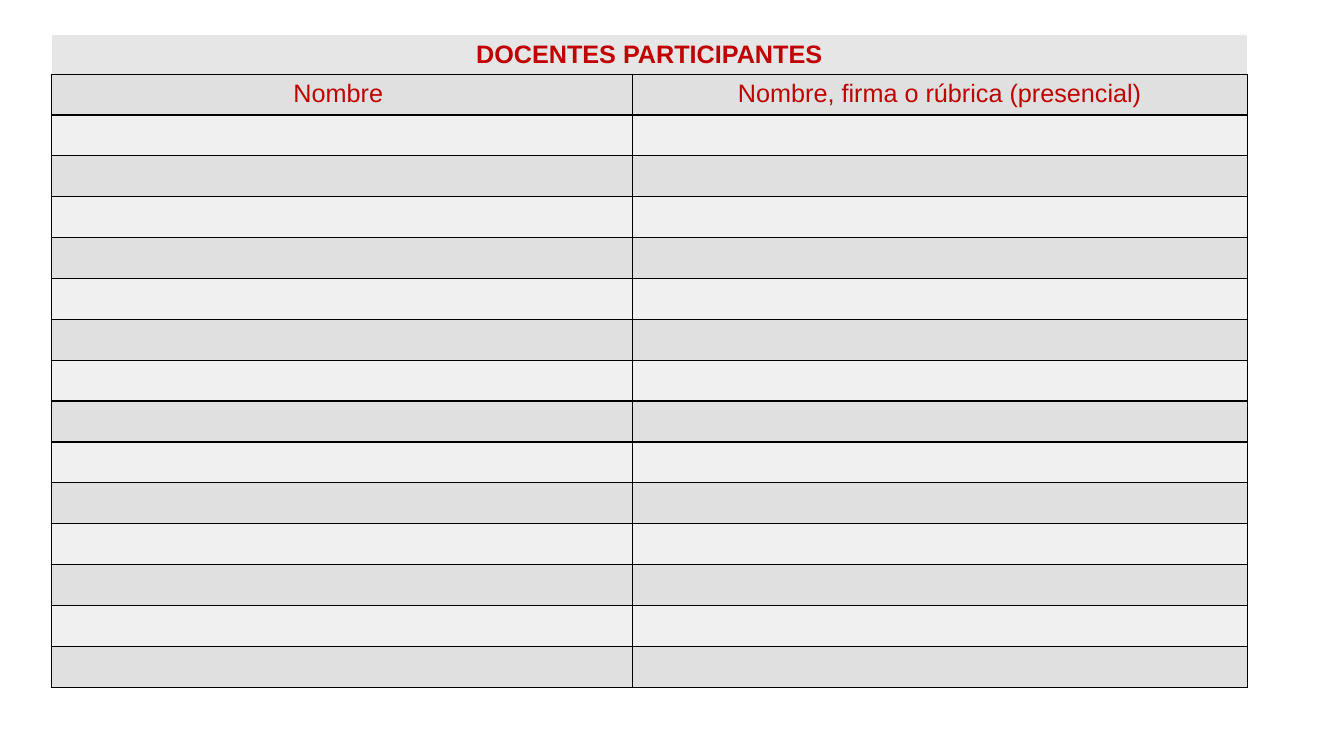
from lxml import etree
from pptx import Presentation
from pptx.dml.color import RGBColor
from pptx.enum.text import MSO_ANCHOR, PP_ALIGN
from pptx.oxml.ns import qn
from pptx.util import Inches, Pt

CENTER = PP_ALIGN.CENTER
MIDDLE = MSO_ANCHOR.MIDDLE

TITLE = "DOCENTES PARTICIPANTES"
HEADINGS = ["Nombre ", "Nombre, firma o rúbrica (presencial)"]
EMPTY_ROWS = 14

THEME = {
    "font": "Arial",
    "size": Pt(18),
    "text": RGBColor.from_string("C00000"),
    "title_fill": RGBColor.from_string("E7E6E6"),
    "bands": [RGBColor.from_string("F0F0F0"), RGBColor.from_string("E0E0E0")],
    "grid": "000000",
    "title_edge": "FFFFFF",
    "line": Pt(1),
}

LEFT, TOP = 0.51, 0.34
COLUMN_WIDTHS = [5.76, 6.1]
ROW_HEIGHT = 0.4


def set_borders(cell, colors):
    properties = cell._tc.get_or_add_tcPr()
    for side, color in zip("LRTB", colors):
        line = etree.SubElement(properties, qn(f"a:ln{side}"), w=str(THEME["line"]))
        fill = etree.SubElement(line, qn("a:solidFill"))
        etree.SubElement(fill, qn("a:srgbClr"), val=color)


def fill_cell(cell, color):
    cell.fill.solid()
    cell.fill.fore_color.rgb = color


def write_cell(cell, text, bold):
    cell.text = text
    paragraph = cell.text_frame.paragraphs[0]
    paragraph.alignment = CENTER
    font = paragraph.font
    font.name = THEME["font"]
    font.size = THEME["size"]
    font.bold = bold
    font.color.rgb = THEME["text"]


def main():
    presentation = Presentation()
    presentation.slide_width = Inches(13.33)
    presentation.slide_height = Inches(7.5)
    slide = presentation.slides.add_slide(presentation.slide_layouts[6])

    row_count = EMPTY_ROWS + 2
    table = slide.shapes.add_table(
        row_count, len(HEADINGS), Inches(LEFT), Inches(TOP),
        Inches(sum(COLUMN_WIDTHS)), Inches(ROW_HEIGHT * row_count),
    ).table
    table.first_row = False
    table.horz_banding = False
    for column, width in zip(table.columns, COLUMN_WIDTHS):
        column.width = Inches(width)

    grid, edge = THEME["grid"], THEME["title_edge"]
    for index, row in enumerate(table.rows):
        row.height = Inches(ROW_HEIGHT)
        is_title = index == 0
        for cell in row.cells:
            set_borders(cell, [edge, edge, edge, grid] if is_title else [grid] * 4)
            fill_cell(cell, THEME["title_fill"] if is_title else THEME["bands"][index % 2])

    title_cell = table.cell(0, 0)
    title_cell.merge(table.cell(0, len(HEADINGS) - 1))
    title_cell.vertical_anchor = MIDDLE
    write_cell(title_cell, TITLE, True)
    for column, heading in enumerate(HEADINGS):
        write_cell(table.cell(1, column), heading, False)

    presentation.save("out.pptx")


if __name__ == "__main__":
    main()
